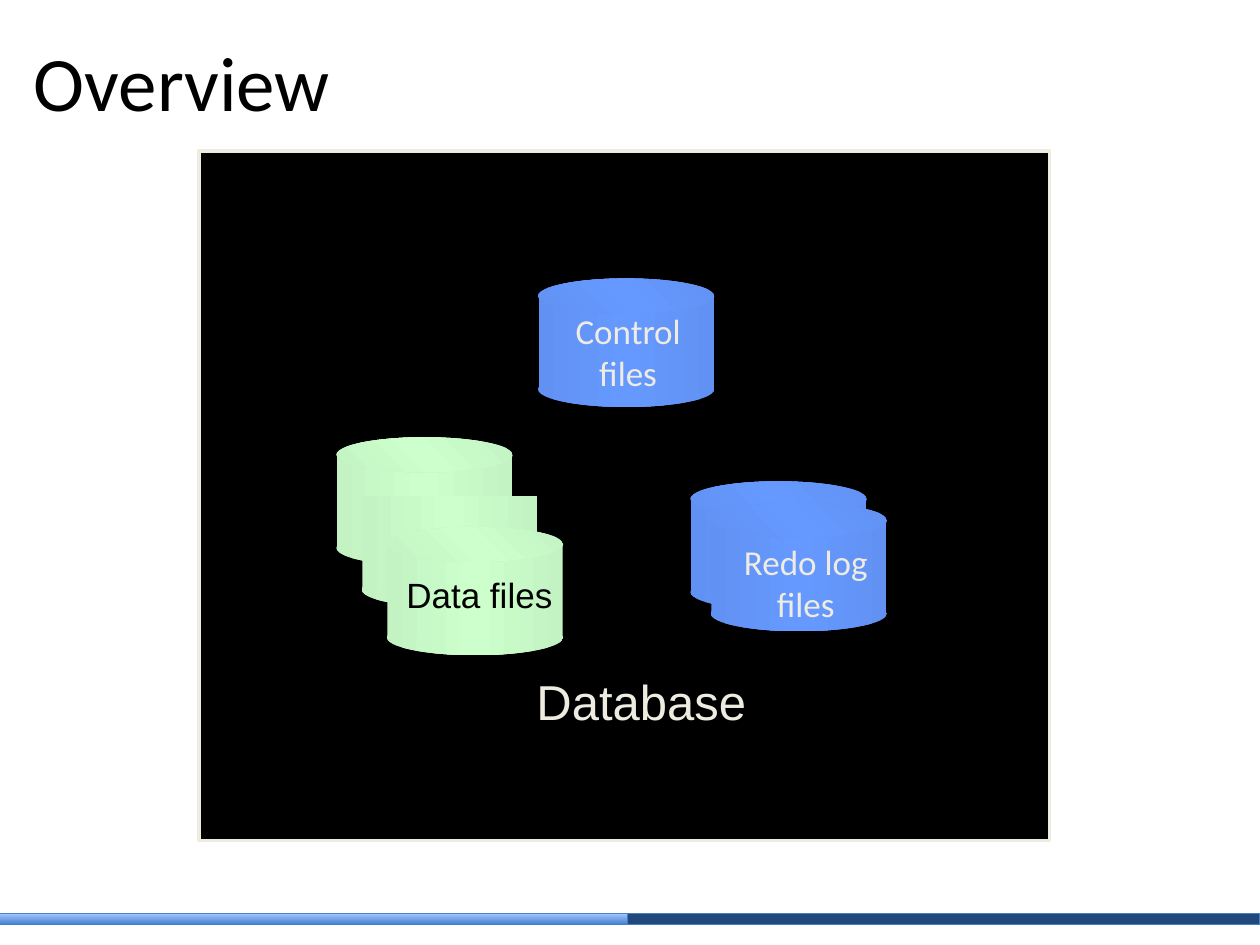
from lxml.etree import SubElement
from pptx import Presentation
from pptx.dml.color import RGBColor
from pptx.enum.shapes import MSO_SHAPE
from pptx.enum.text import MSO_ANCHOR, PP_ALIGN
from pptx.oxml.ns import qn
from pptx.util import Inches, Pt

BLACK = RGBColor(0x00, 0x00, 0x00)
CREAM = RGBColor(0xEE, 0xEC, 0xE1)
NAVY = RGBColor(0x1F, 0x49, 0x7D)
EDGE = RGBColor(0x4B, 0x7E, 0xBC)
DEEP = RGBColor(0x3F, 0x80, 0xCE)
PALE = RGBColor(0xA4, 0xC4, 0xFF)
BLUE = RGBColor(0x66, 0x99, 0xFF)
SHADE = RGBColor(0x61, 0x92, 0xF3)
MINT = RGBColor(0xCC, 0xFF, 0xCC)
LEAF = RGBColor(0xC3, 0xF3, 0xC3)

deck = Presentation()
deck.slide_width, deck.slide_height = Inches(10), Inches(7.5)
slide = deck.slides.add_slide(deck.slide_layouts[6])
unit = deck.slide_width / 100


def place(kind, box, fill, line=None, width=0):
    shape = slide.shapes.add_shape(kind, *[round(n * unit) for n in box])
    shape.shadow.inherit = False
    if line is None:
        shape.line.fill.background()
    else:
        shape.line.color.rgb = line
        shape.line.width = Pt(width)
    if isinstance(fill, RGBColor):
        shape.fill.solid()
        shape.fill.fore_color.rgb = fill
        return
    shades, angle = fill
    shape.fill.gradient()
    grad = shape.element.spPr.find(qn("a:gradFill"))
    for child in list(grad):
        grad.remove(child)
    stops = SubElement(grad, qn("a:gsLst"))
    for i, shade in enumerate(shades):
        stop = SubElement(stops, qn("a:gs"), pos=str(100000 * i // (len(shades) - 1)))
        SubElement(stop, qn("a:srgbClr"), val=str(shade))
    SubElement(grad, qn("a:lin"), ang=str(angle * 60000), scaled="0")


def write(text, box, size, font, color, align=PP_ALIGN.CENTER, anchor=MSO_ANCHOR.TOP):
    frame = slide.shapes.add_textbox(*[round(n * unit) for n in box]).text_frame
    frame.word_wrap = True
    frame.vertical_anchor = anchor
    para = frame.paragraphs[0]
    para.text = text
    para.alignment = align
    para.font.size = Pt(size)
    para.font.name = font
    para.font.color.rgb = color


place(MSO_SHAPE.RECTANGLE, (-0.2, 72.5, 100.1, 0.9), ((DEEP, PALE), 270), EDGE, 0.75)
place(MSO_SHAPE.RECTANGLE, (49.8, 72.5, 50.2, 0.9), NAVY, EDGE, 0.75)
write("Overview", (1.7, 0.8, 96.7, 11.2), 44, "Calibri", BLACK, PP_ALIGN.LEFT, MSO_ANCHOR.MIDDLE)
place(MSO_SHAPE.RECTANGLE, (15.8, 12, 67.5, 54.7), BLACK, CREAM, 2)
write("Database", (41.6, 52.8, 19.3, 5.7), 28, "Arial", CREAM, PP_ALIGN.LEFT)

blues, greens = (SHADE, BLUE, SHADE), (LEAF, MINT, LEAF)
drums = [
    (42.7, 22.1, blues, True),
    (54.8, 38.2, blues, True),
    (56.4, 39.9, blues, True),
    (26.7, 34.7, greens, True),
    (28.7, 38.0, greens, False),
    (30.7, 41.8, greens, True),
]
for left, top, shades, lid in drums:
    place(MSO_SHAPE.OVAL, (left, top + 7.4, 14, 2.8), (shades, 0))
    place(MSO_SHAPE.RECTANGLE, (left + 0.05, top + 1.35, 13.9, 7.6), (shades, 0))
    if lid:
        place(MSO_SHAPE.OVAL, (left, top, 14, 2.8), (shades, 315))

write("Control\vfiles", (43.9, 24.1, 11.9, 7.7), 20, "Calibri", CREAM)
write("Redo log\vfiles", (57, 42.4, 13.9, 7.7), 20, "Calibri", CREAM)
write("Data files", (30.7, 45, 14.7, 5), 20, "Arial", BLACK)

deck.save("out.pptx")
